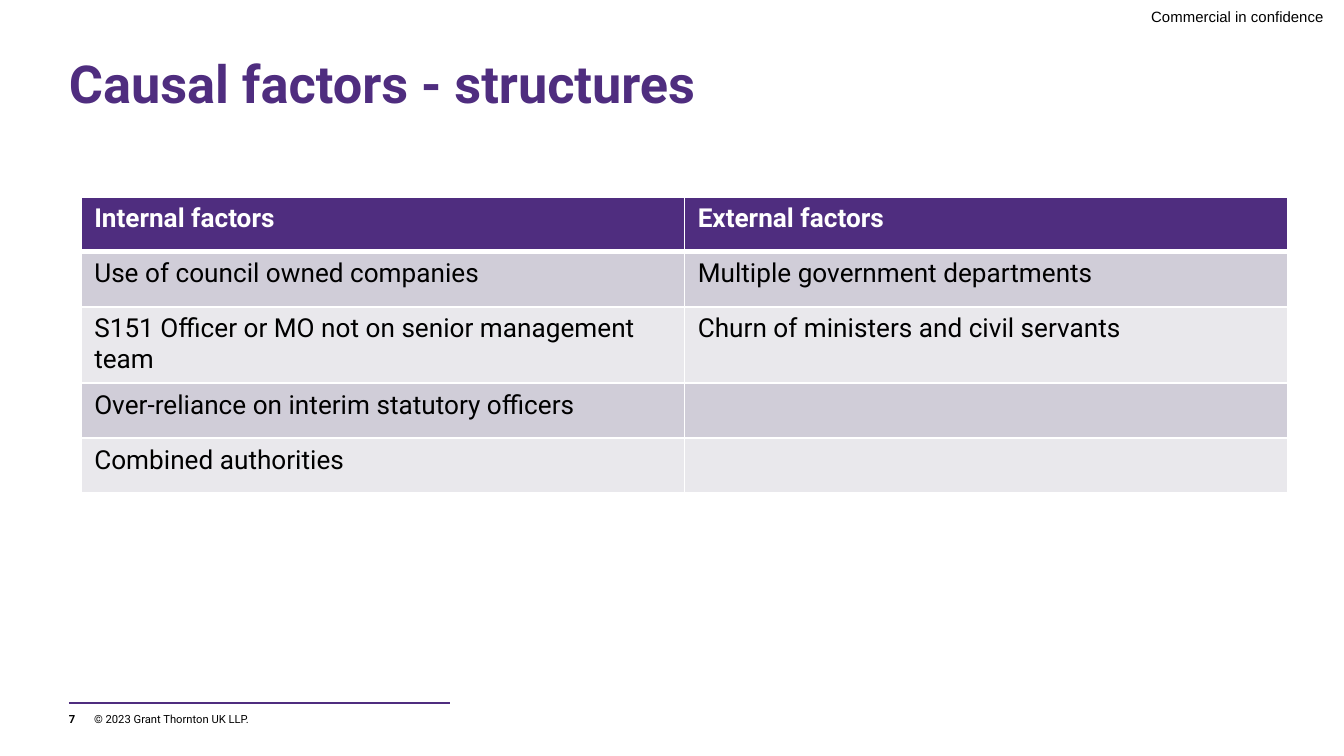
import pptx
import pptx.util
import pptx.dml.color
import pptx.enum.shapes
import pptx.enum.text
import pptx.oxml
import pptx.oxml.ns

Pt = pptx.util.Pt
ALIGN = pptx.enum.text.PP_ALIGN
ANCHOR = pptx.enum.text.MSO_ANCHOR

COLORS = {"purple": "4F2D7F", "dark_band": "D0CDD8", "light_band": "E9E8EC",
          "white": "FFFFFF", "black": "000000"}

TITLE = "Causal factors - structures"
MARKING = "Commercial in confidence"
COPYRIGHT = "© 2023 Grant Thornton UK LLP."
PAGE = "7"
FACTORS = [
    ("Internal factors", "External factors"),
    ("Use of council owned companies", "Multiple government departments"),
    ("S151 Officer or MO not on senior management team",
     "Churn of ministers and civil servants"),
    ("Over-reliance on interim statutory officers", ""),
    ("Combined authorities", ""),
]

LEFT = 36.9
CONTENT_W = 646.6
TABLE_LEFT, TABLE_TOP, ROW_H = 43.3, 105.4, 29.5
FOOTER_TOP = 381.6


def rgb(name):
    return pptx.dml.color.RGBColor.from_string(COLORS[name])


def add_run(p, text, size, color="black", bold=False, font="Roboto"):
    r = p.add_run()
    r.text = text
    r.font.size, r.font.name, r.font.bold = Pt(size), font, bold
    r.font.color.rgb = rgb(color)


def add_text(s, box, text, size, align=ALIGN.LEFT, anchor=ANCHOR.TOP,
             right_inset=0, **style):
    """Add a one-line text box and return its paragraph."""
    tf = s.shapes.add_textbox(*map(Pt, box)).text_frame
    tf.word_wrap = True
    tf.vertical_anchor = anchor
    tf.margin_left = tf.margin_top = tf.margin_bottom = 0
    tf.margin_right = Pt(right_inset)
    p = tf.paragraphs[0]
    p.alignment = align
    add_run(p, text, size, **style)
    return p


def set_borders(cell, widths):
    """Draw white borders; widths maps L, R, T, B to points."""
    tcPr = cell._tc.get_or_add_tcPr()
    for i, side in enumerate("LRTB"):
        tcPr.insert(i, pptx.oxml.parse_xml(
            f'<a:ln{side} {pptx.oxml.ns.nsdecls("a")} w="{Pt(widths[side])}">'
            f'<a:solidFill><a:srgbClr val="{COLORS["white"]}"/></a:solidFill>'
            f'</a:ln{side}>'))


def add_factor_table(s):
    n_rows, n_cols = len(FACTORS), len(FACTORS[0])
    table = s.shapes.add_table(
        n_rows, n_cols, Pt(TABLE_LEFT), Pt(TABLE_TOP),
        Pt(CONTENT_W), Pt(ROW_H * n_rows)).table
    for col in table.columns:
        col.width = Pt(CONTENT_W / n_cols)
    for i, row in enumerate(FACTORS):
        table.rows[i].height = Pt(ROW_H)
        header = i == 0
        fill = "purple" if header else ("light_band", "dark_band")[i % 2]
        for j, text in enumerate(row):
            cell = table.cell(i, j)
            cell.fill.solid()
            cell.fill.fore_color.rgb = rgb(fill)
            set_borders(cell, {"L": 1, "R": 1, "T": 3 if i == 1 else 1,
                               "B": 3 if header else 1})
            p = cell.text_frame.paragraphs[0]
            if text:
                add_run(p, text, 14, "white" if header else "black", header)
            else:
                p.font.size = Pt(14)


def add_footer(s):
    rule = s.shapes.add_connector(
        pptx.enum.shapes.MSO_CONNECTOR.STRAIGHT,
        Pt(LEFT), Pt(376.6), Pt(241.2), Pt(376.6))
    rule.line.color.rgb = rgb("purple")
    rule.line.width = Pt(1.5)
    rule._element.spPr.append(pptx.oxml.parse_xml(
        f'<a:effectLst {pptx.oxml.ns.nsdecls("a")}/>'))
    add_text(s, (LEFT, FOOTER_TOP, 13, 7.2), PAGE, 6, bold=True)
    add_text(s, (50.4, FOOTER_TOP, 310.3, 7.2), COPYRIGHT, 6)


def main():
    prs = pptx.Presentation()
    prs.slide_width, prs.slide_height = Pt(720), Pt(405)
    s = prs.slides.add_slide(prs.slide_layouts[6])
    add_text(s, (607.7, 0, 112.3, 17.3), MARKING, 8, align=ALIGN.RIGHT,
             anchor=ANCHOR.MIDDLE, right_inset=10.8, font="Arial")
    p = add_text(s, (LEFT, 31, CONTENT_W, 62.6), TITLE, 28,
                 color="purple", bold=True)
    p.line_spacing = 0.9
    add_factor_table(s)
    add_footer(s)
    prs.save("out.pptx")


if __name__ == "__main__":
    main()
